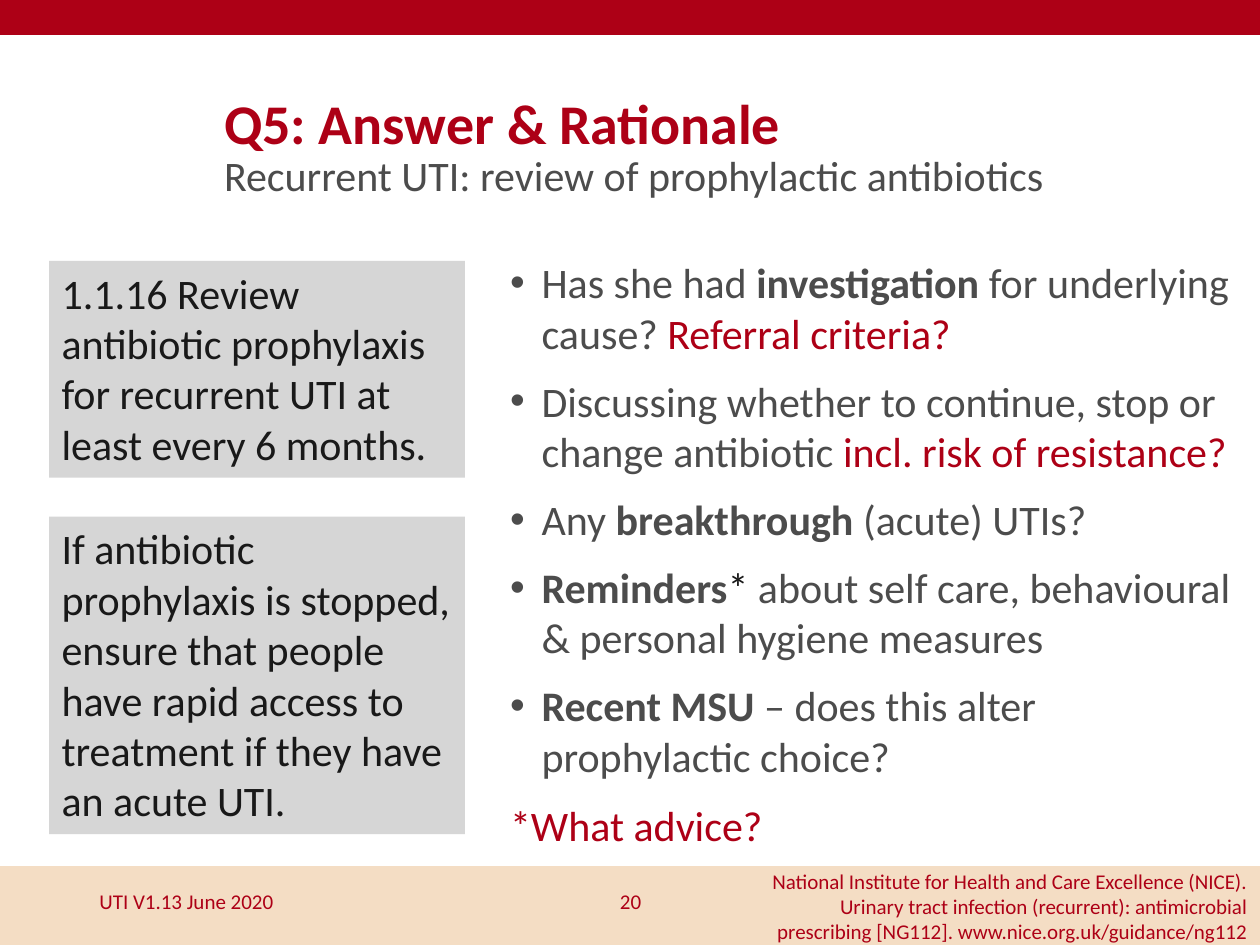
from typing import NamedTuple

from lxml.etree import SubElement
from pptx import Presentation
from pptx.dml.color import RGBColor
from pptx.enum.shapes import MSO_SHAPE as Preset
from pptx.enum.text import MSO_ANCHOR as Anchor, PP_ALIGN as Align
from pptx.oxml.ns import qn
from pptx.util import Inches, Pt

CRIMSON = RGBColor(0xAD, 0x00, 0x16)
PEACH = RGBColor(0xF4, 0xDD, 0xC4)
SILVER = RGBColor(0xD6, 0xD6, 0xD6)
CHARCOAL = RGBColor(0x4C, 0x4C, 0x4C)
INK = RGBColor(0x19, 0x19, 0x19)

FONT = "Calibri"
COLUMNS, ROWS = 100, 75
CELL = Inches(0.1)

GUIDANCE = [
    "1.1.16 Review antibiotic prophylaxis for recurrent UTI at least every 6 months.",
    "If antibiotic prophylaxis is stopped, ensure that people have rapid access to "
    "treatment if they have an acute UTI.",
]
REVIEW_POINTS = [
    [("Has she had", CHARCOAL, False), (" investigation ", CHARCOAL, True),
     ("for underlying cause? ", CHARCOAL, False), ("Referral criteria?", CRIMSON, False)],
    [("Discussing whether to continue, stop or change antibiotic ", CHARCOAL, False),
     ("incl. risk of resistance?", CRIMSON, False)],
    [("Any ", CHARCOAL, False), ("breakthrough", CHARCOAL, True),
     (" (acute) UTIs?", CHARCOAL, False)],
    [("Reminders", CHARCOAL, True), ("* ", INK, False),
     ("about self care, behavioural & personal hygiene measures", CHARCOAL, False)],
    [("Recent MSU ", CHARCOAL, True),
     ("– does this alter prophylactic choice?", CHARCOAL, False)],
]
CITATION = (
    "National Institute for Health and Care Excellence (NICE). Urinary tract infection "
    "(recurrent): antimicrobial prescribing [NG112]. www.nice.org.uk/guidance/ng112"
)


class Box(NamedTuple):
    """An area in grid columns and rows."""
    left: float
    top: float
    width: float
    height: float

    def area(self, column, row, width, height):
        """Return an area measured from this one's top left corner."""
        return Box(self.left + column, self.top + row, width, height)

    def lengths(self):
        """Return the area in slide units."""
        return [round(cells * CELL) for cells in self]


def style(font, size, color, bold=False):
    """Set the face, size, colour and weight of a font."""
    font.name, font.size, font.bold = FONT, Pt(size), bold
    font.color.rgb = color


def add_panel(slide, box, fill, outline=None):
    """Draw a flat rectangle."""
    panel = slide.shapes.add_shape(Preset.RECTANGLE, *box.lengths())
    panel.shadow.inherit = False
    panel.fill.solid()
    panel.fill.fore_color.rgb = fill
    if outline is None:
        panel.line.fill.background()
    else:
        panel.line.color.rgb = outline
        panel.line.width = Pt(1)
    return panel


def write(shape, text, size, color, bold=False, align=Align.LEFT, anchor=Anchor.TOP):
    """Put one styled paragraph into a shape and return it."""
    frame = shape.text_frame
    frame.word_wrap = True
    frame.vertical_anchor = anchor
    frame.text = text
    paragraph = frame.paragraphs[0]
    paragraph.alignment = align
    style(paragraph.runs[0].font, size, color, bold)
    return paragraph


def add_label(slide, box, *args, **options):
    """Add a text box holding one styled paragraph."""
    return write(slide.shapes.add_textbox(*box.lengths()), *args, **options)


def add_bullet(paragraph):
    """Give a paragraph a hanging bullet."""
    properties = paragraph._p.get_or_add_pPr()
    properties.set("marL", str(Inches(0.25)))
    properties.set("indent", str(-Inches(0.25)))
    SubElement(properties, qn("a:buFont")).set("typeface", "Arial")
    SubElement(properties, qn("a:buChar")).set("char", "•")


def add_heading(slide, box):
    """Place the title and the subtitle under it."""
    title = add_label(slide, box.area(0, 0, box.width, 7.1), "Q5: Answer & Rationale",
                      32, CRIMSON, bold=True, anchor=Anchor.MIDDLE)
    title.line_spacing = 0.9
    add_label(slide, box.area(0, 4.9, box.width, 5),
              "Recurrent UTI: review of prophylactic antibiotics", 24, CHARCOAL)


def add_guidance(slide, box):
    """Stack the grey guidance panels, the last one reaching the bottom."""
    first_height, second_top = 17.2, 20.3
    areas = [box.area(0, 0, box.width, first_height),
             box.area(0, second_top, box.width, box.height - second_top)]
    for area, advice in zip(areas, GUIDANCE):
        write(add_panel(slide, area, SILVER), advice, 24, INK)


def add_review(slide, box):
    """List the review points with the closing question below."""
    points = slide.shapes.add_textbox(*box.area(0, 0, box.width, 45.6).lengths())
    frame = points.text_frame
    frame.word_wrap = True
    for index, point in enumerate(REVIEW_POINTS):
        paragraph = frame.add_paragraph() if index else frame.paragraphs[0]
        if index:
            paragraph.space_before = Pt(10)
        add_bullet(paragraph)
        for text, color, bold in point:
            run = paragraph.add_run()
            run.text = text
            style(run.font, 24, color, bold)
    add_label(slide, box.area(0, 43.1, box.width, 5), "*What advice?", 24, CRIMSON)


def add_footer(slide, box):
    """Draw the bottom band with version, page number and citation."""
    add_panel(slide, box, PEACH, PEACH)
    add_label(slide, box.area(6.9, 0.7, 22.5, 4), "UTI V1.13 June 2020",
              12, CRIMSON, anchor=Anchor.MIDDLE)
    add_label(slide, box.area(38.8, 0.7, 22.5, 4), "20",
              12, CRIMSON, align=Align.CENTER, anchor=Anchor.MIDDLE)
    add_label(slide, box.area(59.7, -0.4, 40.3, 7.1), CITATION,
              12, CRIMSON, align=Align.RIGHT)


def main():
    """Build and save the slide."""
    deck = Presentation()
    deck.slide_width, deck.slide_height = COLUMNS * CELL, ROWS * CELL
    slide = deck.slides.add_slide(deck.slide_layouts[6])
    add_panel(slide, Box(0, 0, COLUMNS, 2.7), CRIMSON, CRIMSON)
    add_footer(slide, Box(0, 68.8, COLUMNS, ROWS - 68.8))
    add_heading(slide, Box(16.8, 6.5, 75.7, 9.9))
    add_guidance(slide, Box(3.9, 20.7, 33, 45.5))
    add_review(slide, Box(39.5, 19.9, 59.3, 48.1))
    deck.save("out.pptx")


if __name__ == "__main__":
    main()
